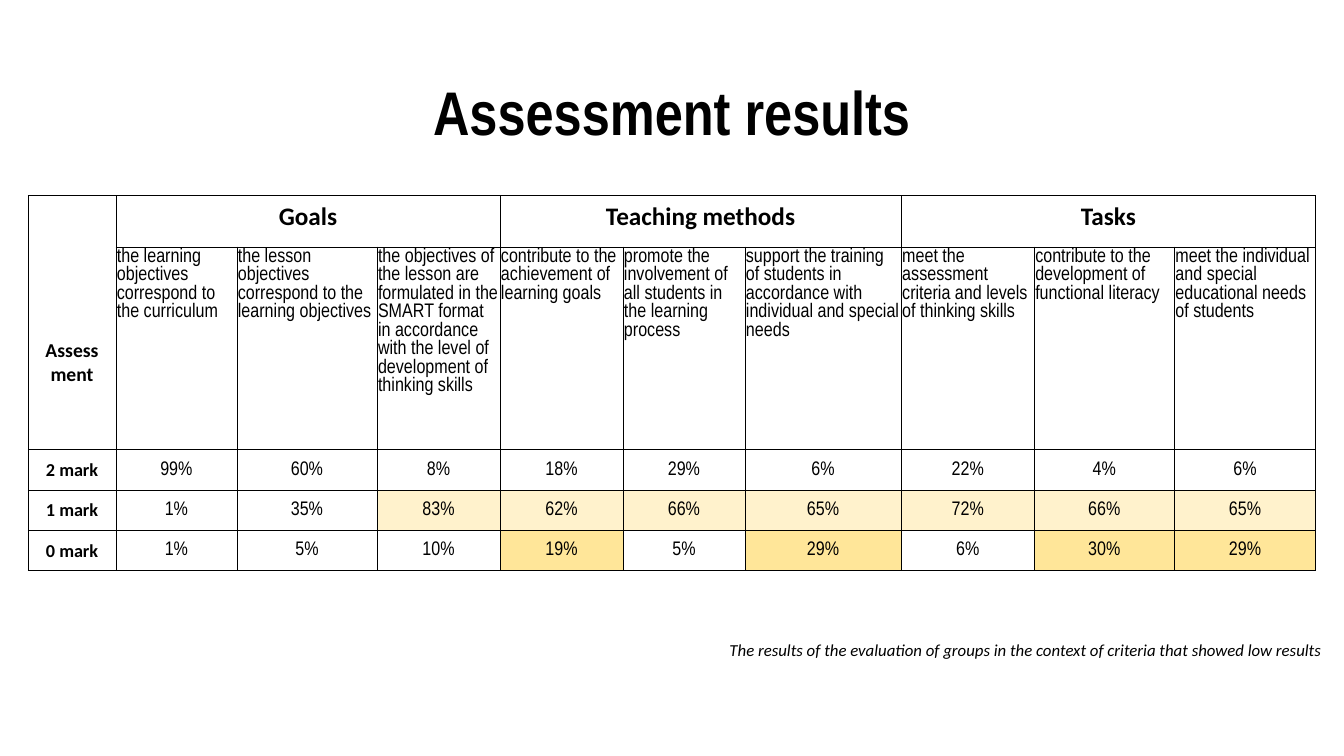
from dataclasses import dataclass

from lxml import etree
from pptx import Presentation
from pptx.dml.color import RGBColor
from pptx.enum.text import MSO_ANCHOR, PP_ALIGN
from pptx.oxml.ns import qn
from pptx.util import Inches, Pt

LEFT, CENTER, RIGHT = PP_ALIGN.LEFT, PP_ALIGN.CENTER, PP_ALIGN.RIGHT
TOP, MIDDLE = MSO_ANCHOR.TOP, MSO_ANCHOR.MIDDLE


@dataclass(frozen=True)
class Theme:
    """Colours, fonts and type sizes of the slide."""
    ink: str = "000000"
    light: str = "FFF2CC"
    strong: str = "FFE699"
    narrow: str = "Arial Narrow"
    plain: str = "Calibri"
    title: int = 44
    group: int = 18
    body: int = 14
    mark: int = 13
    note: int = 12
    border: float = 0.5


THEME = Theme()
WIDE_INSETS = (0.11, 0.06, 0.11, 0.06)
TIGHT_INSETS = (0.01, 0.01, 0.01, 0)
LABEL_INSETS = (0.11, 1.42, 0.11, 0.06)
COLUMNS = [0.87, 1.2, 1.39, 1.22, 1.22, 1.21, 1.55, 1.32, 1.39, 1.4]
ROWS = [0.51, 2.01, 0.4, 0.4, 0.4]
GROUPS = ["Goals", "Teaching methods", "Tasks"]
CRITERIA = [
    "the learning objectives correspond to the curriculum",
    "the lesson objectives correspond to the learning objectives",
    "the objectives of the lesson are formulated in the SMART format in "
    "accordance with the level of development of thinking skills",
    "contribute to the achievement of learning goals",
    "promote the involvement of all students in the learning process",
    "support the training of students in accordance with individual and "
    "special needs",
    "meet the assessment criteria and levels of thinking skills",
    "contribute to the development of functional literacy",
    "meet the individual and special educational needs of students",
]
MARKS = [
    ("2 mark", [99, 60, 8, 18, 29, 6, 22, 4, 6], None, None),
    ("1 mark", [1, 35, 83, 62, 66, 65, 72, 66, 65], 60, THEME.light),
    ("0 mark", [1, 5, 10, 19, 5, 29, 6, 30, 29], 15, THEME.strong),
]


def write(tf, text, size, font=THEME.plain, bold=False, italic=False,
          align=CENTER, spacing=None):
    """Put one formatted paragraph into a text frame."""
    p = tf.paragraphs[0]
    p.alignment = align
    if spacing:
        p.line_spacing = spacing
    r = p.add_run()
    r.text = text
    r.font.size = Pt(size)
    r.font.name = font
    r.font.bold = bold
    r.font.italic = italic
    r.font.color.rgb = RGBColor.from_string(THEME.ink)


def add_text(s, box, text, size, wrap=True, anchor=TOP, **style):
    """Add a text box with one paragraph."""
    tf = s.shapes.add_textbox(*map(Inches, box)).text_frame
    tf.word_wrap = wrap
    tf.vertical_anchor = anchor
    write(tf, text, size, **style)


def add_borders(cell):
    """Draw a thin line on all four sides of a cell."""
    tc_pr = cell._tc.get_or_add_tcPr()
    for i, side in enumerate(("a:lnL", "a:lnR", "a:lnT", "a:lnB")):
        ln = etree.Element(qn(side), w=str(Pt(THEME.border)))
        fill = etree.SubElement(ln, qn("a:solidFill"))
        etree.SubElement(fill, qn("a:srgbClr"), val=THEME.ink)
        tc_pr.insert(i, ln)


def fill_cell(cell, text, size, insets=TIGHT_INSETS, anchor=TOP, fill=None,
              **style):
    """Set the text, insets, anchor and fill of a cell."""
    (cell.margin_left, cell.margin_top,
     cell.margin_right, cell.margin_bottom) = map(Inches, insets)
    cell.vertical_anchor = anchor
    if fill:
        cell.fill.solid()
        cell.fill.fore_color.rgb = RGBColor.from_string(fill)
    write(cell.text_frame, text, size, **style)


def add_grid(s, left, top):
    """Add a plain table with thin borders."""
    frame = s.shapes.add_table(len(ROWS), len(COLUMNS), Inches(left),
                               Inches(top), Inches(sum(COLUMNS)),
                               Inches(sum(ROWS)))
    table = frame.table
    table.first_row = table.horz_banding = False
    for column, width in zip(table.columns, COLUMNS):
        column.width = Inches(width)
    for row, height in zip(table.rows, ROWS):
        row.height = Inches(height)
    for cell in table.iter_cells():
        cell.fill.background()
        add_borders(cell)
    return table


def fill_header(table):
    """Write the row label, the groups and their criteria."""
    label = table.cell(0, 0)
    label.merge(table.cell(1, 0))
    fill_cell(label, "Assessment", THEME.body, insets=LABEL_INSETS, bold=True)
    span = len(CRITERIA) // len(GROUPS)
    for i, group in enumerate(GROUPS):
        first = 1 + i * span
        cell = table.cell(0, first)
        cell.merge(table.cell(0, first + span - 1))
        fill_cell(cell, group, THEME.group, insets=WIDE_INSETS, bold=True)
    for col, criterion in enumerate(CRITERIA, 1):
        fill_cell(table.cell(1, col), criterion, THEME.body,
                  font=THEME.narrow, align=LEFT)


def fill_marks(table):
    """Write the shares per mark and highlight those above the limit."""
    for row, (mark, shares, limit, colour) in enumerate(MARKS, 2):
        fill_cell(table.cell(row, 0), mark, THEME.mark, anchor=MIDDLE,
                  bold=True)
        for col, share in enumerate(shares, 1):
            fill = colour if limit and share > limit else None
            fill_cell(table.cell(row, col), f"{share}%", THEME.body,
                      anchor=MIDDLE, fill=fill, font=THEME.narrow)


def main():
    """Build the slide and save it."""
    prs = Presentation()
    prs.slide_width, prs.slide_height = Inches(13.33), Inches(7.5)
    s = prs.slides.add_slide(prs.slide_layouts[6])
    add_text(s, (0.7, 0.46, 11.93, 1.37), "Assessment results", THEME.title,
             anchor=MIDDLE, font=THEME.narrow, bold=True, spacing=0.9)
    table = add_grid(s, 0.28, 1.94)
    fill_header(table)
    fill_marks(table)
    add_text(s, (7.08, 6.3, 6.13, 0.3),
             "The results of the evaluation of groups in the context of "
             "criteria that showed low results",
             THEME.note, wrap=False, italic=True, align=RIGHT)
    prs.save("out.pptx")


if __name__ == "__main__":
    main()
